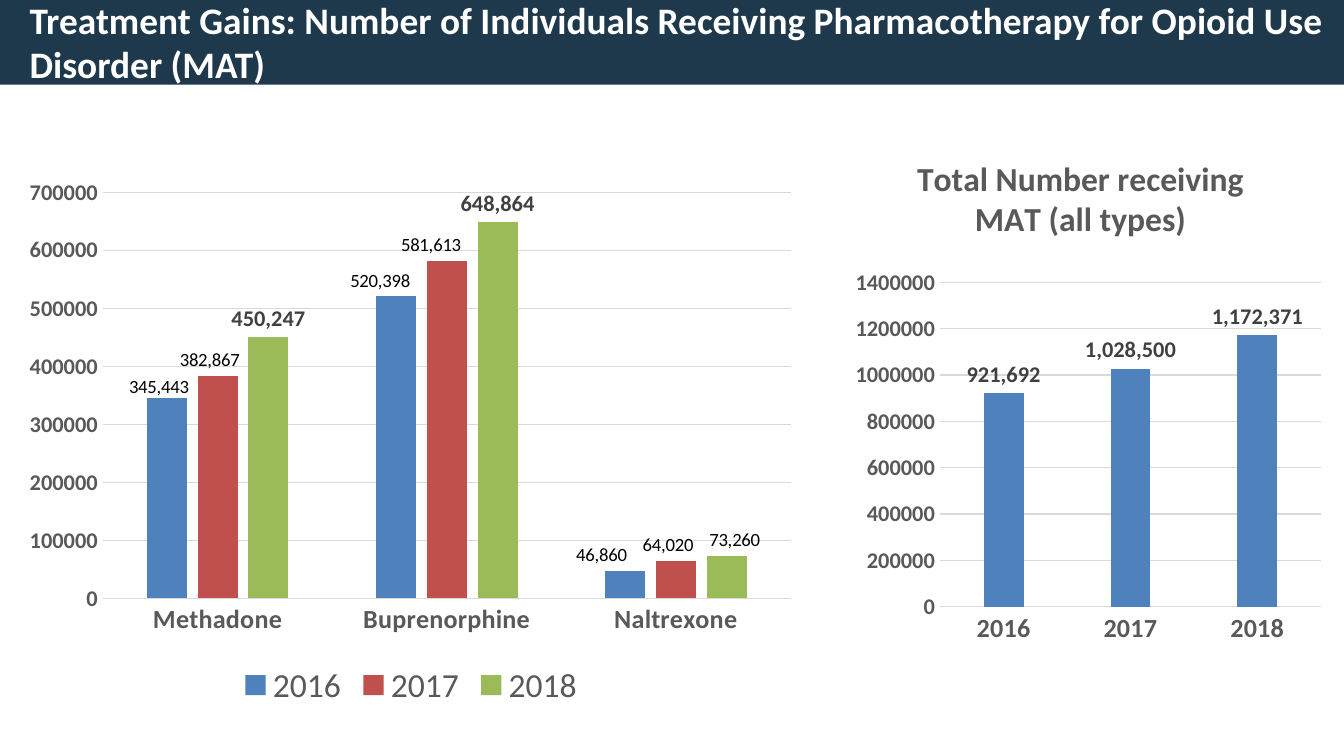
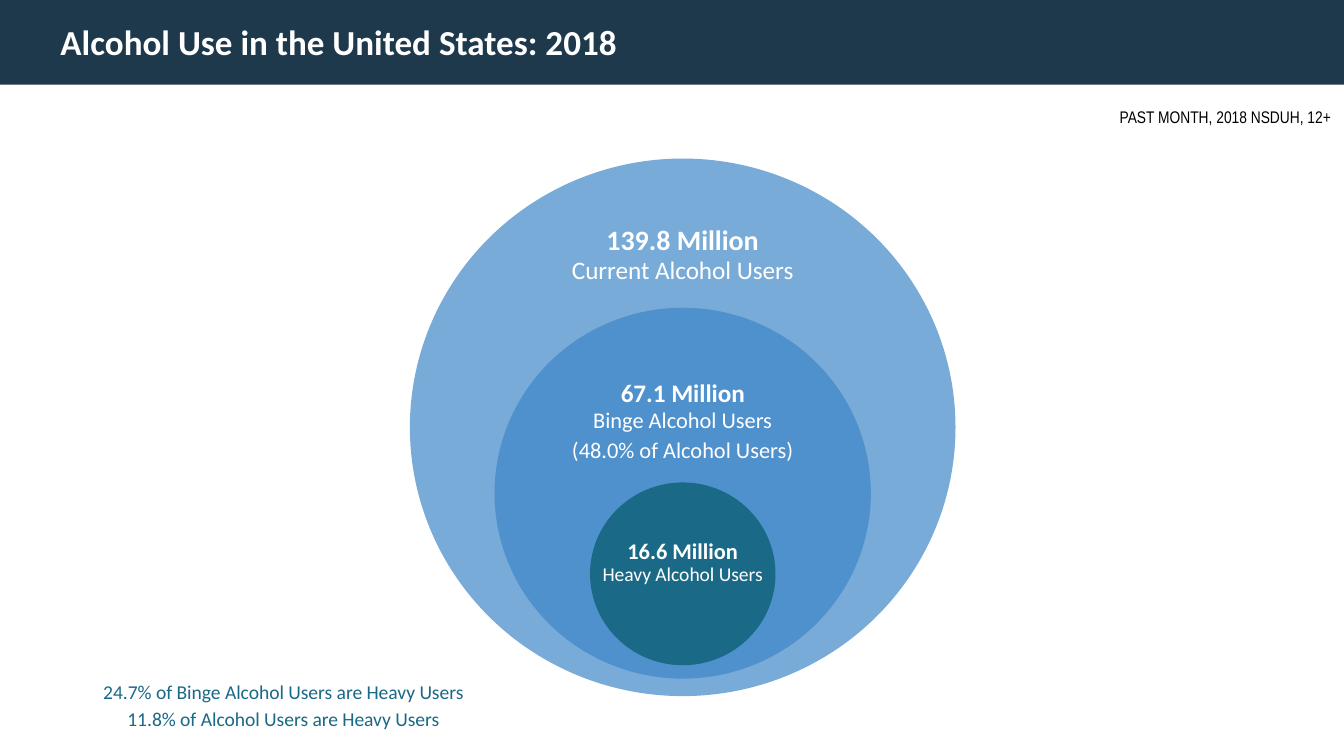
from lxml.etree import SubElement
from pptx import Presentation
from pptx.chart.data import CategoryChartData
from pptx.dml.color import RGBColor
from pptx.enum.chart import XL_CHART_TYPE, XL_LABEL_POSITION, XL_LEGEND_POSITION, XL_TICK_MARK
from pptx.enum.shapes import MSO_SHAPE
from pptx.enum.text import MSO_ANCHOR, MSO_AUTO_SIZE, PP_ALIGN
from pptx.oxml import parse_xml
from pptx.oxml.ns import nsdecls, qn
from pptx.util import Inches, Pt

W = 10
H = W * 9 / 16
BAND_H = 0.63
CENTER_X = 5.08
FONT = "Calibri"
COLORS = {
    "band": "1E384C", "white": "FFFFFF", "black": "000000",
    "axis": "595959", "grid": "D9D9D9", "label": "404040",
    "blue": "4F81BD", "red": "C0504D", "green": "9BBB59",
    "current": "79ABD9", "binge": "4F91CD", "heavy": "1A6986",
}

MAT_TITLE = ("Treatment Gains: Number of Individuals Receiving Pharmacotherapy "
             "for Opioid Use Disorder (MAT)")
BY_DRUG = {
    "box": (0.12, 1.27, 5.88, 4.03),
    "plot": (0.11, 0.04, 0.87, 0.75),
    "cats": ["Methadone", "Buprenorphine", "Naltrexone"],
    "max": 700000,
    "series": [
        ("2016", "blue", [345443, 520398, 46860],
         {0: (-0.01, 0.01), 1: (-0.02, 0), 2: (-0.03, 0)}),
        ("2017", "red", [382867, 581613, 64020],
         {0: (-0.01, 0), 1: (-0.02, 0), 2: (-0.01, 0)}),
        ("2018", "green", [450247, 648864, 73260], {2: (0.01, 0)}),
    ],
    "legend": True,
}
ALL_TYPES = {
    "box": (6.27, 1.03, 3.63, 3.83),
    "plot": (0.2, 0.28, 0.78, 0.63),
    "cats": ["2016", "2017", "2018"],
    "max": 1400000,
    "series": [("Series 1", "blue", [921692, 1028500, 1172371], {})],
    "title": "Total Number receiving MAT (all types)",
    "title_at": (0.14, 0.02),
}

ALCOHOL_TITLE = "Alcohol Use in the United States: 2018"
SURVEY = "PAST MONTH, 2018 NSDUH, 12+"
CIRCLES = [
    ("current", 4.06, 4, 5.18),
    ("binge", 2.8, 2.76, 5.05),
    ("heavy", 1.38, 1.36, 4.95),
]
CAPTIONS = [
    (1.57, 2.44, 0.66, [("139.8 Million", 15, True, 0),
                        ("Current Alcohol Users", 13.5, False, 0)]),
    (2.53, 2.72, 1.22, [("67.1 Million", 13.5, True, 0),
                        ("Binge Alcohol Users", 12, False, 0),
                        ("(48.0% of Alcohol Users)", 12, False, 3)]),
    (3.69, 2.32, 1, [("16.6 Million", 12, True, 0),
                     ("Heavy Alcohol Users", 10.5, False, 0)]),
]
SHARES = [
    ("24.7% of Binge Alcohol Users are Heavy Users", 10.5, False, 0),
    ("11.8% of Alcohol Users are Heavy Users", 10.5, False, 3),
]


def rgb(name):
    return RGBColor.from_string(COLORS[name])


def inches(*values):
    return [Inches(v) for v in values]


def style(font, size, color, bold=False, name=FONT):
    font.size, font.bold, font.name = Pt(size), bold, name
    font.color.rgb = rgb(color)


def add_filled(slide, kind, box, color):
    sp = slide.shapes.add_shape(kind, *inches(*box))
    sp.shadow.inherit = False
    sp.fill.solid()
    sp.fill.fore_color.rgb = rgb(color)
    sp.line.fill.background()
    return sp


def add_text(slide, box, lines, color, align=PP_ALIGN.CENTER, spacing=0.92, font=FONT):
    tf = slide.shapes.add_textbox(*inches(*box)).text_frame
    tf.word_wrap = True
    tf.vertical_anchor = MSO_ANCHOR.MIDDLE
    for i, (text, size, bold, before) in enumerate(lines):
        p = tf.add_paragraph() if i else tf.paragraphs[0]
        p.alignment, p.line_spacing = align, spacing
        if before:
            p.space_before = Pt(before)
        r = p.add_run()
        r.text = text
        style(r.font, size, color, bold, font)


def add_slide(prs, title, left, width, size):
    slide = prs.slides.add_slide(prs.slide_layouts[5])
    sp = slide.shapes.title
    sp.left, sp.top, sp.width, sp.height = inches(left, 0.05, width, 0.52)
    tf = sp.text_frame
    tf.auto_size = MSO_AUTO_SIZE.NONE
    tf.vertical_anchor = MSO_ANCHOR.MIDDLE
    p = tf.paragraphs[0]
    p.alignment = PP_ALIGN.LEFT
    r = p.add_run()
    r.text = title
    style(r.font, size, "white", True)
    return slide


def manual_layout(values, inner=False, edge=False):
    layout = parse_xml(f"<c:layout {nsdecls('c')}><c:manualLayout/></c:layout>")
    if inner:
        SubElement(layout[0], qn("c:layoutTarget")).set("val", "inner")
    if inner or edge:
        for key in ("xMode", "yMode"):
            SubElement(layout[0], qn(f"c:{key}")).set("val", "edge")
    for key, value in zip("xywh", values):
        SubElement(layout[0], qn(f"c:{key}")).set("val", str(value))
    return layout


def label_series(series, shifts):
    labels = series.data_labels
    labels.show_value = True
    labels.number_format = "#,##0;[Red]#,##0"
    labels.number_format_is_linked = False
    labels.position = XL_LABEL_POSITION.OUTSIDE_END
    style(labels.font, 12, "label", True)
    for i, shift in shifts.items():
        series.points[i].data_label.position = XL_LABEL_POSITION.OUTSIDE_END
        label = labels._element.xpath(f'c:dLbl[c:idx/@val="{i}"]')[0]
        label.insert(1, manual_layout(shift))


def add_columns(slide, spec):
    data = CategoryChartData()
    data.categories = spec["cats"]
    for name, _, values, _ in spec["series"]:
        data.add_series(name, values)
    chart = slide.shapes.add_chart(
        XL_CHART_TYPE.COLUMN_CLUSTERED, *inches(*spec["box"]), data).chart
    style(chart.font, 10, "black")

    plot = chart.plots[0]
    plot.gap_width, plot.overlap, plot.vary_by_categories = 219, -27, False
    for series, (_, color, _, shifts) in zip(plot.series, spec["series"]):
        series.format.fill.solid()
        series.format.fill.fore_color.rgb = rgb(color)
        label_series(series, shifts)

    cat, val = chart.category_axis, chart.value_axis
    for axis, size in ((cat, 14), (val, 12)):
        axis.major_tick_mark = axis.minor_tick_mark = XL_TICK_MARK.NONE
        style(axis.tick_labels.font, size, "axis", True)
    val.minimum_scale, val.maximum_scale = 0, spec["max"]
    val.major_unit = spec["max"] / 7
    val.format.line.fill.background()
    for line in (cat.format.line, val.major_gridlines.format.line):
        line.color.rgb = rgb("grid")
        line.width = Pt(0.75)

    chart.has_legend = spec.get("legend", False)
    if chart.has_legend:
        chart.legend.position = XL_LEGEND_POSITION.BOTTOM
        chart.legend.include_in_layout = False
        style(chart.legend.font, 18, "axis")
    chart.has_title = "title" in spec
    if chart.has_title:
        title = chart.chart_title
        r = title.text_frame.paragraphs[0].add_run()
        r.text = spec["title"]
        style(r.font, 18, "axis", True)
        set_layout(title._element, 1, manual_layout(spec["title_at"], edge=True))
    area = chart._chartSpace.find(".//" + qn("c:plotArea"))
    set_layout(area, 0, manual_layout(spec["plot"], inner=True))


def set_layout(parent, at, layout):
    for old in parent.findall(qn("c:layout")):
        parent.remove(old)
    parent.insert(at, layout)


def main():
    prs = Presentation()
    prs.slide_width, prs.slide_height = inches(W, H)

    s = add_slide(prs, MAT_TITLE, 0.12, W - 0.12, 20)
    band = add_filled(s, MSO_SHAPE.RECTANGLE, (0, 0, W, BAND_H), "band")
    s.slide_layout.shapes.element.insert(2, band.element)
    for spec in (BY_DRUG, ALL_TYPES):
        add_columns(s, spec)

    s = add_slide(prs, ALCOHOL_TITLE, 0.35, 9.15, 18.8)
    add_text(s, (W - 3.5, 0.74, 3.5, 0.25), [(SURVEY, 9, False, 0)], "black",
             PP_ALIGN.RIGHT, 1.0, "Arial Narrow")
    for color, w, h, bottom in CIRCLES:
        add_filled(s, MSO_SHAPE.OVAL, (CENTER_X - w / 2, bottom - h, w, h), color)
    for top, w, h, lines in CAPTIONS:
        add_text(s, (CENTER_X - w / 2, top, w, h), lines, "white")
    add_text(s, (0.18, 4.76, 3.86, 1), SHARES, "heavy")

    prs.save("out.pptx")


if __name__ == "__main__":
    main()
